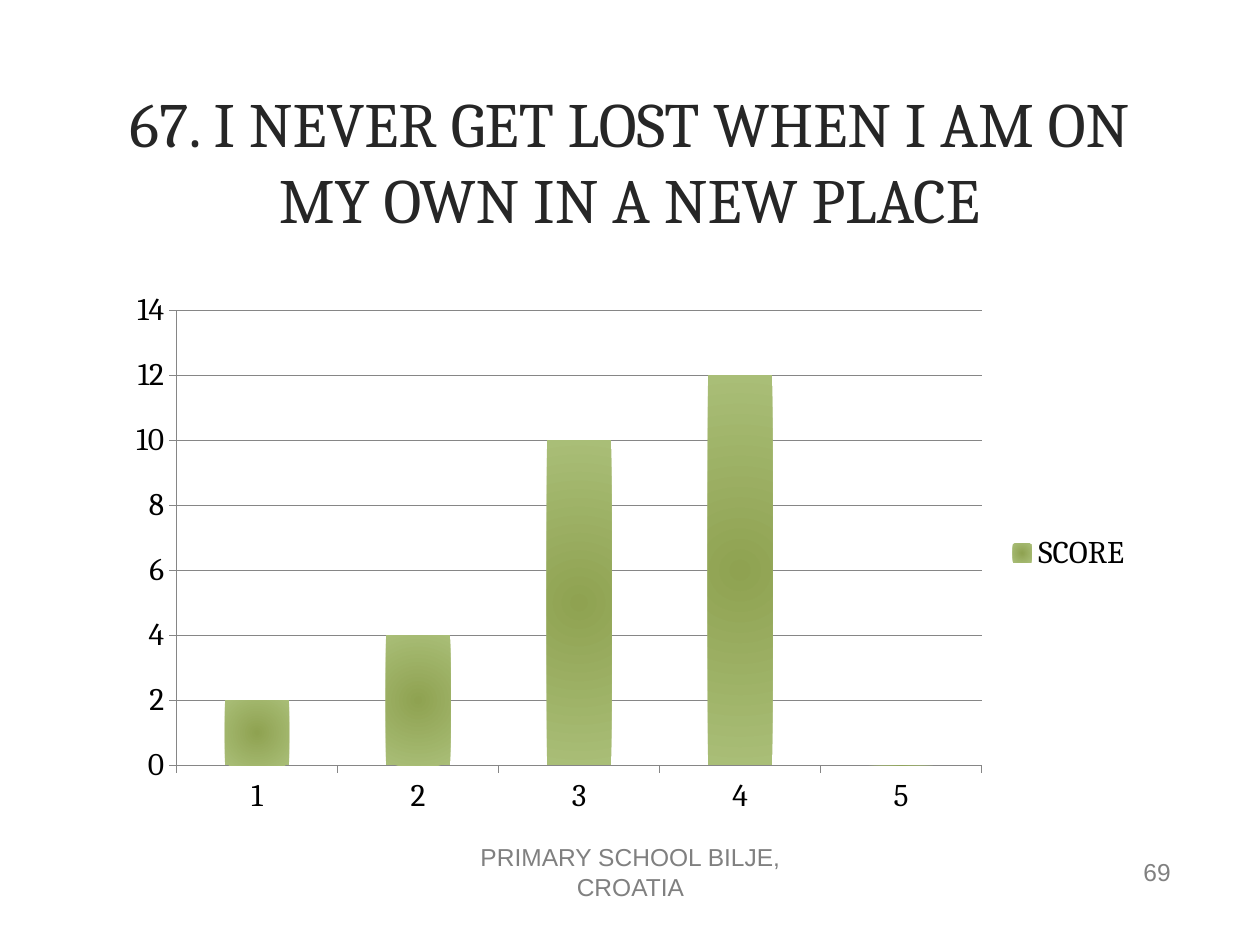
import pptx
import pptx.chart.data
import pptx.dml.color
import pptx.enum.chart
import pptx.enum.text
import pptx.oxml
import pptx.oxml.ns
import pptx.util
from dataclasses import dataclass

Pt = pptx.util.Pt
Align = pptx.enum.text.PP_ALIGN


def rgb(value):
    return pptx.dml.color.RGBColor.from_string(value)


@dataclass(frozen=True)
class Theme:
    heading_font: str = "Cambria"
    small_font: str = "Arial"
    title_color: str = "262626"
    chart_color: str = "000000"
    footer_color: str = "808080"
    line_color: str = "868686"
    bar_center: str = "8FA251"
    bar_edge: str = "A9BE77"
    title_size: float = 36
    chart_size: float = 18
    footer_size: float = 14


THEME = Theme()
NS = pptx.oxml.ns.nsdecls("a")


def style_font(font, name, size, color):
    for attribute, value in {"name": name, "size": Pt(size), "bold": False}.items():
        setattr(font, attribute, value)
    font.color.rgb = rgb(color)


def write_text(shape, text, align, name, size, color):
    frame = shape.text_frame
    frame.text = text
    frame.word_wrap = True
    frame.auto_size = pptx.enum.text.MSO_AUTO_SIZE.NONE
    frame.vertical_anchor = pptx.enum.text.MSO_ANCHOR.MIDDLE
    line = frame.paragraphs[0]
    line.alignment = align
    style_font(line.runs[0].font, name, size, color)


def place_title(slide, box, text):
    title = slide.shapes.title
    for side, length in zip(("left", "top", "width", "height"), box):
        setattr(title, side, Pt(length))
    write_text(title, text, Align.CENTER, THEME.heading_font,
               THEME.title_size, THEME.title_color)


def fill_bars(series):
    """Radial gradient, darker at the center of each bar."""
    fill = series.format.fill
    fill.gradient()
    for stop, color in zip(fill.gradient_stops, (THEME.bar_center, THEME.bar_edge)):
        stop.color.rgb = rgb(color)
    linear = next(series._element.iter(pptx.oxml.ns.qn("a:lin")))
    radial = pptx.oxml.parse_xml(
        f'<a:path {NS} path="circle">'
        '<a:fillToRect l="50000" t="50000" r="50000" b="50000"/></a:path>')
    linear.getparent().replace(linear, radial)


def place_chart(slide, box, name, scores):
    data = pptx.chart.data.CategoryChartData()
    data.categories = [str(number) for number in range(1, len(scores) + 1)]
    data.add_series(name, scores)
    chart = slide.shapes.add_chart(
        pptx.enum.chart.XL_CHART_TYPE.COLUMN_CLUSTERED, *map(Pt, box), data).chart
    style_font(chart.font, THEME.heading_font, THEME.chart_size, THEME.chart_color)
    chart.has_title = False
    chart.has_legend = True
    chart.legend.position = pptx.enum.chart.XL_LEGEND_POSITION.RIGHT
    chart.legend.include_in_layout = False

    # Bars
    plot = chart.plots[0]
    plot.gap_width = 150
    plot.vary_by_categories = False
    fill_bars(plot.series[0])

    # Axes and gridlines
    scale = chart.value_axis
    for attribute, value in {"minimum_scale": 0, "maximum_scale": 14,
                             "major_unit": 2, "has_major_gridlines": True}.items():
        setattr(scale, attribute, value)
    for axis in (chart.category_axis, scale):
        axis.major_tick_mark = pptx.enum.chart.XL_TICK_MARK.OUTSIDE
    for part in (chart.category_axis, scale, scale.major_gridlines):
        part.format.line.color.rgb = rgb(THEME.line_color)
        part.format.line.width = Pt(0.75)


def place_footer(slide, box, text, align):
    footer = slide.shapes.add_textbox(*map(Pt, box))
    write_text(footer, text, align, THEME.small_font,
               THEME.footer_size, THEME.footer_color)


def main():
    deck = pptx.Presentation()
    deck.slide_width, deck.slide_height = Pt(720), Pt(540)
    slide = deck.slides.add_slide(deck.slide_layouts[5])

    place_title(slide, (43.2, 34.6, 632.9, 113.8),
                "67. I NEVER GET LOST WHEN I AM ON MY OWN IN A NEW PLACE")
    place_chart(slide, (66.2, 160.6, 588.2, 311), "SCORE", (2, 4, 10, 12, 0))

    # Footer line: school and page number
    place_footer(slide, (246.2, 483.8, 228.2, 28.8),
                 "PRIMARY SCHOOL BILJE, CROATIA", Align.CENTER)
    place_footer(slide, (508.3, 483.8, 167.8, 28.8), "69", Align.RIGHT)

    deck.save("out.pptx")


if __name__ == "__main__":
    main()
